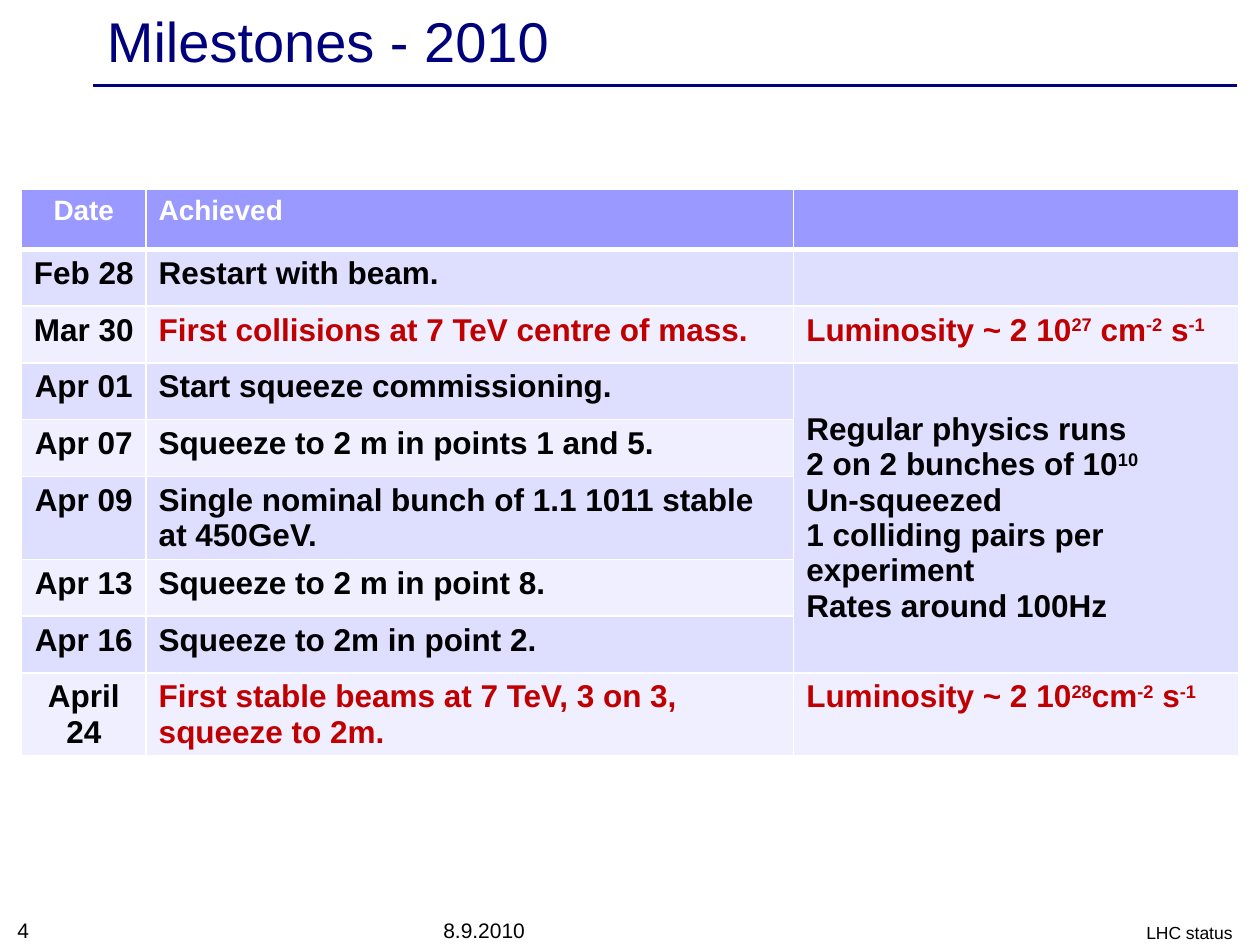
from lxml.etree import SubElement as Sub
from pptx import Presentation
from pptx.dml.color import RGBColor as RGB
from pptx.enum.text import MSO_ANCHOR as Anchor, PP_ALIGN as Align
from pptx.oxml.ns import qn
from pptx.util import Inches, Pt

NAVY = RGB(0x00, 0x00, 0x7D)
BLACK = RGB(0x00, 0x00, 0x00)
WHITE = RGB(0xFF, 0xFF, 0xFF)
RED = RGB(0xC0, 0x00, 0x00)
HEAD = RGB(0x99, 0x99, 0xFF)
DARK = RGB(0xDE, 0xDE, 0xFF)
PALE = RGB(0xEF, 0xEF, 0xFF)

WIDTHS = [0.99, 5.14, 3.53]
HEIGHTS = [0.48, 0.45, 0.45, 0.45, 0.45, 0.66, 0.45, 0.45, 0.66]
ROWS = [
    ("Date", "Achieved", ""),
    ("Feb 28", "Restart with beam.", ""),
    ("Mar 30", "First collisions at 7 TeV centre of mass.", "Luminosity ~ 2 10^27^ cm^-2^ s^-1^"),
    ("Apr 01", "Start squeeze commissioning.",
     "Regular physics runs\n2 on 2 bunches of 10^10^\nUn-squeezed\n"
     "1 colliding pairs per experiment\nRates around 100Hz"),
    ("Apr 07", "Squeeze to 2 m in points 1 and 5.", ""),
    ("Apr 09", "Single nominal bunch of 1.1 1011 stable at 450GeV.", ""),
    ("Apr 13", "Squeeze to 2 m in point 8.", ""),
    ("Apr 16", "Squeeze to 2m in point 2.", ""),
    ("April 24", "First stable beams at 7 TeV, 3 on 3, squeeze to 2m.",
     "Luminosity ~ 2 10^28^cm^-2^ s^-1^"),
]
KEY_ROWS = (2, 8)
RUNS_TOP, RUNS_END = 3, 7


def write(frame, text, size=18, color=BLACK, bold=False, align=Align.LEFT, font="Arial"):
    """Fill a text frame, one paragraph per line, with ^...^ as superscript."""
    for num, line in enumerate(text.split("\n")):
        para = frame.add_paragraph() if num else frame.paragraphs[0]
        para.alignment = align
        para.font.size = Pt(size)
        for pos, part in enumerate(line.split("^")):
            if not part:
                continue
            run = para.add_run()
            run.text = part
            run.font.name, run.font.size, run.font.bold = font, Pt(size), bold
            run.font.color.rgb = color
            if pos % 2:
                run.font._element.set("baseline", "30000")


class Deck:
    """Hold the style and the current slide."""

    def __init__(self):
        """Start a deck with one blank slide."""
        self.file = Presentation()
        self.file.slide_width, self.file.slide_height = Inches(10), Inches(7.5)
        self.slide = self.file.slides.add_slide(self.file.slide_layouts[6])

    def rule(self, left, right, top):
        """Draw the line under the title."""
        line = self.slide.shapes.add_connector(1, Inches(left), Inches(top), Inches(right), Inches(top))
        line.line.color.rgb = NAVY
        line.line.width = Pt(2)
        line._element.spPr.find(qn("a:ln")).set("cap", "sq")
        Sub(line._element.spPr, qn("a:effectLst"))

    def label(self, text, box, anchor=Anchor.BOTTOM, **style):
        """Place a text box."""
        frame = self.slide.shapes.add_textbox(*map(Inches, box)).text_frame
        frame.word_wrap = True
        frame.vertical_anchor = anchor
        write(frame, text, **style)

    def edge(self, cell, side, width):
        """Give one side of a cell a white border."""
        line = Sub(cell._tc.get_or_add_tcPr(), qn(f"a:ln{side}"), w=str(Pt(width)))
        Sub(Sub(line, qn("a:solidFill")), qn("a:srgbClr"), val=str(WHITE))

    def cell(self, cell, text, row, col):
        """Style and fill one cell of the table."""
        for side in "LRTB":
            thick = (row, side) in ((0, "B"), (1, "T"))
            self.edge(cell, side, 3 if thick else 1)
        cell.margin_bottom = Inches(0.01)
        if col == 0:
            cell.margin_left = cell.margin_right = Inches(0.08)
        cell.fill.solid()
        cell.fill.fore_color.rgb = DARK if row % 2 else PALE
        color = RED if row in KEY_ROWS and col else BLACK
        if row == 0:
            cell.fill.fore_color.rgb, color = HEAD, WHITE
        align = Align.LEFT if col else Align.CENTER
        write(cell.text_frame, text, 18 if row else 16, color, True, align)

    def table(self, rows, left, top):
        """Add the table of milestones."""
        size = map(Inches, (left, top, sum(WIDTHS), sum(HEIGHTS)))
        grid = self.slide.shapes.add_table(len(rows), len(WIDTHS), *size).table
        for col, width in zip(grid.columns, WIDTHS):
            col.width = Inches(width)
        for line, height in zip(grid.rows, HEIGHTS):
            line.height = Inches(height)
        for row, texts in enumerate(rows):
            for col, text in enumerate(texts):
                self.cell(grid.cell(row, col), text, row, col)
        runs = grid.cell(RUNS_TOP, 2)
        runs.merge(grid.cell(RUNS_END, 2))
        runs.vertical_anchor = Anchor.MIDDLE
        runs.margin_bottom = Inches(0.05)


def main():
    """Build the slide and save it."""
    deck = Deck()
    deck.rule(0.75, 9.8, 0.68)
    deck.label("Milestones - 2010", (0.75, 0.03, 9, 0.57), Anchor.MIDDLE, size=32, color=NAVY)
    deck.label("8.9.2010", (3.42, 7.25, 3.17, 0.28), size=12)
    deck.label("LHC status", (7.55, 7.25, 2.33, 0.28), size=10, align=Align.RIGHT)
    deck.label("4", (0.04, 7.25, 2.33, 0.28), size=12)
    deck.table(ROWS, 0.17, 1.5)
    deck.file.save("out.pptx")


if __name__ == "__main__":
    main()
